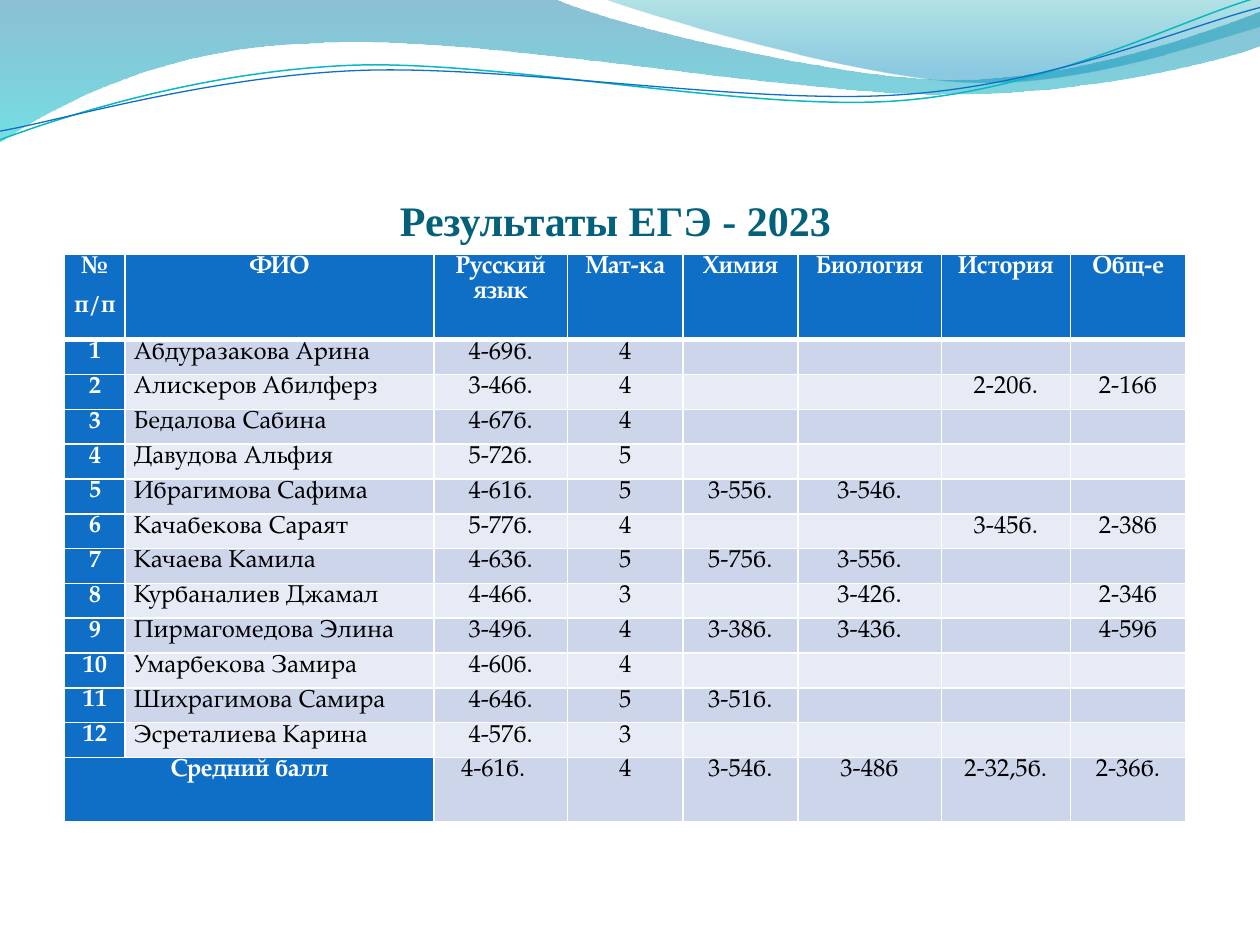
from dataclasses import dataclass

from lxml import etree
from pptx import Presentation
from pptx.dml.color import RGBColor
from pptx.enum import text
from pptx.oxml import ns
from pptx.util import Pt


@dataclass(frozen=True)
class Theme:
    """Colours, fonts and type sizes of the slide."""
    title: str = "04617B"
    accent: str = "0F6FC6"
    teal: str = "0AB8BF"
    light: str = "FFFFFF"
    dark: str = "000000"
    bands: tuple = ("CCD5EA", "E7EBF5")
    band_stops: tuple = ((0, "0074A1", 45), (1, "00C6CF", 55))
    sheet_stops: tuple = ((0, "00A1A9", 30), (0.8, "008BBF", 45))
    title_font: str = "Times New Roman"
    table_font: str = "TeX Gyre Pagella"
    title_size: int = 24
    table_size: int = 14


THEME = Theme()
BAND = [(0, 0), (316.8, -0.7), (342.7, 12.2, 478.1, 45.4, 545.8, 45.4),
        (614.2, 45.4, 689.8, 18.7, 720, 6.5), (720.7, 25.9),
        (707.8, 31.7, 626.4, 54.7, 537.1, 54), (447.8, 54, 275, 20.2, 185, 24.5),
        (92.9, 25.9, 33.1, 59.8, -0.7, 81.4)]
SHEET = [(344.9, -0.7), (366.5, 7.9, 491, 44.6, 553.7, 46.8),
         (616.3, 49.7, 691.9, 23, 720, 15.1), (720, 0)]
TEAL_LINE = [(0, 79.9), (34.6, 67, 113.8, 41, 199.4, 37.4),
             (284.4, 33.8, 427, 64.1, 513.4, 57.6), (599.8, 51.1, 675.4, 10.8, 718.6, -1.4)]
BLUE_LINE = [(0, 74.9), (33.8, 69.1, 118.1, 43.9, 203.8, 40.3),
             (290.2, 36.7, 429.8, 60.5, 516.2, 54), (601.9, 48.2, 677.5, 15.1, 720, 4.3)]

COLUMNS = [34.5, 176.5, 76.3, 66, 65.7, 82, 73.7, 66]
HEADER = ["№\nп/п", "ФИО", "Русский язык", "Мат-ка", "Химия", "Биология", "История", "Общ-е"]
STUDENTS = [
    ["Абдуразакова Арина", "4-69б.", "4", "", "", "", ""],
    ["Алискеров Абилферз", "3-46б.", "4", "", "", "2-20б.", "2-16б"],
    ["Бедалова Сабина", "4-67б.", "4", "", "", "", ""],
    ["Давудова Альфия", "5-72б.", "5", "", "", "", ""],
    ["Ибрагимова Сафима", "4-61б.", "5", "3-55б.", "3-54б.", "", ""],
    ["Качабекова Сараят", "5-77б.", "4", "", "", "3-45б.", "2-38б"],
    ["Качаева Камила", "4-63б.", "5", "5-75б.", "3-55б.", "", ""],
    ["Курбаналиев Джамал", "4-46б.", "3", "", "3-42б.", "", "2-34б"],
    ["Пирмагомедова Элина", "3-49б.", "4", "3-38б.", "3-43б.", "", "4-59б"],
    ["Умарбекова Замира", "4-60б.", "4", "", "", "", ""],
    ["Шихрагимова Самира", "4-64б.", "5", "3-51б.", "", "", ""],
    ["Эсреталиева Карина", "4-57б.", "3", "", "", "", ""],
]
AVERAGE = ["Средний балл", "", "4-61б.", "4", "3-54б.", "3-48б", "2-32,5б.", "2-36б."]


def rgb(color):
    """Turn a hex string into a colour."""
    return RGBColor.from_string(color)


def add_wave(s, box, path, close):
    """Add one outline of lines and cubic curves, offset to the box."""
    points = [(Pt(box[0] + part[i]), Pt(box[1] + part[i + 1]))
              for part in path for i in range(0, len(part), 2)]
    builder = s.shapes.build_freeform(*points[0], scale=1.0)
    builder.add_line_segments(points[1:], close=close)
    sp = builder.convert_to_shape()
    sp.shadow.inherit = False
    segments = iter(list(sp.element.spPr.iter(ns.qn("a:lnTo"))))
    for part in path[1:]:
        segment = next(segments)
        if len(part) == 6:
            curve = etree.Element(ns.qn("a:cubicBezTo"))
            segment.addprevious(curve)
            for node in (segment, next(segments), next(segments)):
                curve.append(node[0])
                node.getparent().remove(node)
    return sp


def add_waves(s, box):
    """Draw the translucent bands and the two thin lines at the top."""
    for path, stops in ((BAND, THEME.band_stops), (SHEET, THEME.sheet_stops)):
        sp = add_wave(s, box, path, True)
        sp.line.fill.background()
        sp.fill.gradient()
        sp.fill.gradient_angle = 270
        for stop, (position, color, _) in zip(sp.fill.gradient_stops, stops):
            stop.position = position
            stop.color.rgb = rgb(color)
        colors = sp.element.spPr.iter(ns.qn("a:srgbClr"))
        for node, (_, _, opacity) in zip(colors, stops):
            etree.SubElement(node, ns.qn("a:alpha")).set("val", str(opacity * 1000))
    for path, color, width in ((TEAL_LINE, THEME.teal, 0.85), (BLUE_LINE, THEME.accent, 0.75)):
        sp = add_wave(s, box, path, False)
        sp.fill.background()
        sp.line.color.rgb = rgb(color)
        sp.line.width = Pt(width)


def place_title(s, box):
    """Fill and format the title placeholder, in front of the waves."""
    sp = s.shapes.title
    sp.element.getparent().append(sp.element)
    sp.left, sp.top, sp.width, sp.height = map(Pt, box)
    tf = sp.text_frame
    tf.text = "Результаты ЕГЭ - 2023"
    tf.auto_size = text.MSO_AUTO_SIZE.NONE
    tf.vertical_anchor = text.MSO_ANCHOR.BOTTOM
    tf.margin_left, tf.margin_right, tf.margin_top, tf.margin_bottom = map(Pt, (192.5, 0, 3.6, 5.5))
    p = tf.paragraphs[0]
    p.alignment = text.PP_ALIGN.LEFT
    p.font.name, p.font.size, p.font.bold = THEME.title_font, Pt(THEME.title_size), True
    p.font.color.rgb = rgb(THEME.title)


def fill_cell(cell, value, fill, strong, align):
    """Write and format one table cell."""
    cell.text = value
    cell.fill.solid()
    cell.fill.fore_color.rgb = rgb(fill)
    cell.margin_left = cell.margin_right = Pt(5)
    cell.margin_top = cell.margin_bottom = Pt(0)
    for p in cell.text_frame.paragraphs:
        p.alignment = align
        p.line_spacing = 1.06
        p.space_after = Pt(8)
        p.font.name, p.font.size, p.font.bold = THEME.table_font, Pt(THEME.table_size), strong
        p.font.color.rgb = rgb(THEME.light if strong else THEME.dark)


def border_header(cell):
    """Give a header cell thin white sides and a thick bottom."""
    tc_pr = cell._tc.get_or_add_tcPr()
    for i, (side, width) in enumerate((("L", 1), ("R", 1), ("T", 1), ("B", 3))):
        line = etree.Element(ns.qn(f"a:ln{side}"), w=str(Pt(width)))
        solid = etree.SubElement(line, ns.qn("a:solidFill"))
        etree.SubElement(solid, ns.qn("a:srgbClr"), val=THEME.light)
        tc_pr.insert(i, line)


def add_results(s, box):
    """Build the table of exam results."""
    rows = [HEADER, *([str(i), *row] for i, row in enumerate(STUDENTS, 1)), AVERAGE]
    last = len(rows) - 1
    tbl = s.shapes.add_table(len(rows), len(COLUMNS), *map(Pt, box)).table
    tbl.first_col = True
    for column, width in zip(tbl.columns, COLUMNS):
        column.width = Pt(width)
    for i, row in enumerate(rows):
        tbl.rows[i].height = Pt({0: 48.7, last: 36.8}.get(i, 19.9))
        for j, value in enumerate(row):
            strong = i == 0 or j == 0
            fill = THEME.accent if strong else THEME.bands[(i - 1) % 2]
            name = j == 1 and 0 < i < last
            align = text.PP_ALIGN.LEFT if name else text.PP_ALIGN.CENTER
            fill_cell(tbl.cell(i, j), value, fill, strong, align)
    for j in range(len(COLUMNS)):
        border_header(tbl.cell(0, j))
    tbl.cell(last, 0).merge(tbl.cell(last, 1))
    average = tbl.cell(last, 2)
    average.margin_left = Pt(15.5)
    average.text_frame.paragraphs[0].alignment = text.PP_ALIGN.LEFT


def main():
    """Build and save the slide."""
    prs = Presentation()
    prs.slide_width, prs.slide_height = Pt(720), Pt(540)
    s = prs.slides.add_slide(prs.slide_layouts[5])
    add_waves(s, (0, 0))
    place_title(s, (36, 55.4, 648, 90))
    add_results(s, (37, 145.4, sum(COLUMNS), 324.3))
    prs.save("out.pptx")


if __name__ == "__main__":
    main()
